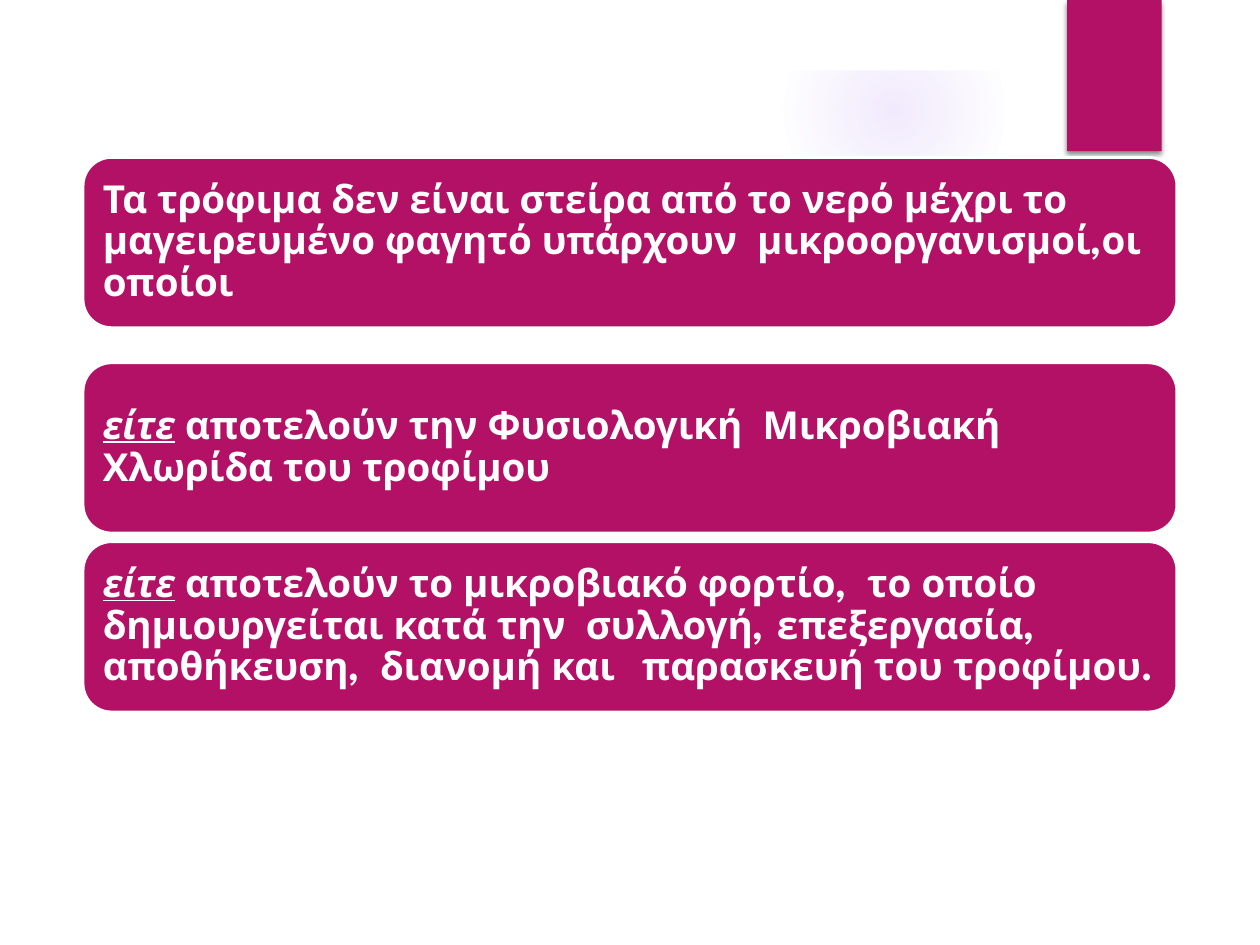
from dataclasses import dataclass

from lxml.etree import SubElement
from pptx import Presentation
from pptx.dml.color import RGBColor
from pptx.enum.shapes import MSO_SHAPE
from pptx.enum.text import MSO_ANCHOR, PP_ALIGN
from pptx.oxml import parse_xml
from pptx.oxml.ns import nsdecls, qn
from pptx.util import Emu, Pt

EMU_PER_PX = 9144  # 100 px to the inch


def px(length):
    return Emu(length * EMU_PER_PX)


@dataclass(frozen=True)
class Theme:
    accent: str = "B31166"
    glow: str = "9B6BF2"
    white: str = "FFFFFF"
    black: str = "000000"
    font: str = "League Spartan"
    text_size: int = 22
    line_width: float = 1.5


class SlideBuilder:
    def __init__(self, presentation, theme):
        self.theme = theme
        self.slide = presentation.slides.add_slide(presentation.slide_layouts[6])

    def shape(self, kind, left, top, width, height, color):
        shape = self.slide.shapes.add_shape(
            kind, px(left), px(top), px(width), px(height))
        shape.shadow.inherit = False
        shape.fill.solid()
        shape.fill.fore_color.rgb = RGBColor.from_string(color)
        shape.line.fill.background()
        return shape

    def glow(self, left, top, diameter, stops):
        """Circle whose colour fades outwards; stops are (position, opacity) in percent."""
        shape = self.shape(MSO_SHAPE.OVAL, left, top, diameter, diameter, self.theme.glow)
        stop_xml = "".join(
            f'<a:gs pos="{position * 1000}"><a:srgbClr val="{self.theme.glow}">'
            f'<a:alpha val="{opacity * 1000}"/></a:srgbClr></a:gs>'
            for position, opacity in stops)
        gradient = parse_xml(
            f'<a:gradFill {nsdecls("a")}><a:gsLst>{stop_xml}</a:gsLst><a:path path="circle">'
            '<a:fillToRect l="50000" t="50000" r="50000" b="50000"/></a:path></a:gradFill>')
        properties = shape.element.spPr
        properties.replace(properties.find(qn("a:solidFill")), gradient)

    def frame(self, width, height, border):
        shape = self.shape(MSO_SHAPE.FRAME, 0, 0, width, height, self.theme.white)
        shape.adjustments[0] = border / min(width, height)

    def tab(self, left, top, width, height):
        shape = self.shape(MSO_SHAPE.RECTANGLE, left, top, width, height, self.theme.accent)
        effects = shape.element.spPr.find(qn("a:effectLst"))
        shadow = SubElement(effects, qn("a:outerShdw"), blurRad=str(Pt(3)),
                            dist=str(Pt(2)), dir="5400000", rotWithShape="0")
        color = SubElement(shadow, qn("a:srgbClr"), val=self.theme.black)
        SubElement(color, qn("a:alpha"), val="45000")

    def card(self, left, top, width, height, lead, text):
        shape = self.shape(MSO_SHAPE.ROUNDED_RECTANGLE, left, top, width, height,
                           self.theme.accent)
        shape.line.color.rgb = RGBColor.from_string(self.theme.white)
        shape.line.width = Pt(self.theme.line_width)
        frame = shape.text_frame
        frame.word_wrap = True
        frame.vertical_anchor = MSO_ANCHOR.MIDDLE
        frame.margin_left = frame.margin_right = px(9)
        frame.margin_top = frame.margin_bottom = px(9)
        paragraph = frame.paragraphs[0]
        paragraph.alignment = PP_ALIGN.LEFT
        paragraph.line_spacing = 0.9
        paragraph._p.get_or_add_pPr().set("defTabSz", str(px(107)))
        if lead:
            self.run(paragraph, lead, italic=True, underline=True)
            self.run(paragraph, " ", italic=True)
        self.run(paragraph, text)

    def run(self, paragraph, text, italic=False, underline=False):
        run = paragraph.add_run()
        run.text = text
        font = run.font
        font.name = self.theme.font
        font.size = Pt(self.theme.text_size)
        font.bold = True
        font.italic = italic
        font.underline = underline
        font.color.rgb = RGBColor.from_string(self.theme.white)


CARDS = [
    (125, "", "Τα τρόφιμα δεν είναι στείρα από το νερό μέχρι το μαγειρευμένο φαγητό "
              "υπάρχουν  μικροοργανισμοί,οι οποίοι"),
    (288, "είτε", "αποτελούν την Φυσιολογική  Μικροβιακή Χλωρίδα του τροφίμου"),
    (430, "είτε", "αποτελούν το μικροβιακό φορτίο,  το οποίο δημιουργείται κατά την  "
                  "συλλογή,\tεπεξεργασία, αποθήκευση,  διανομή και\tπαρασκευή του τροφίμου."),
]


def main():
    presentation = Presentation()
    presentation.slide_width, presentation.slide_height = px(1000), px(750)
    builder = SlideBuilder(presentation, Theme())

    # Background: soft glow trimmed by a white border, and the corner tab
    builder.glow(622, 0, 175, [(0, 14), (36, 7), (73, 0)])
    builder.frame(1000, 750, 56)
    builder.tab(847, 0, 75, 120)

    # Statement cards
    for top, lead, text in CARDS:
        builder.card(66, top, 868, 135, lead, text)

    presentation.save("out.pptx")


if __name__ == "__main__":
    main()
